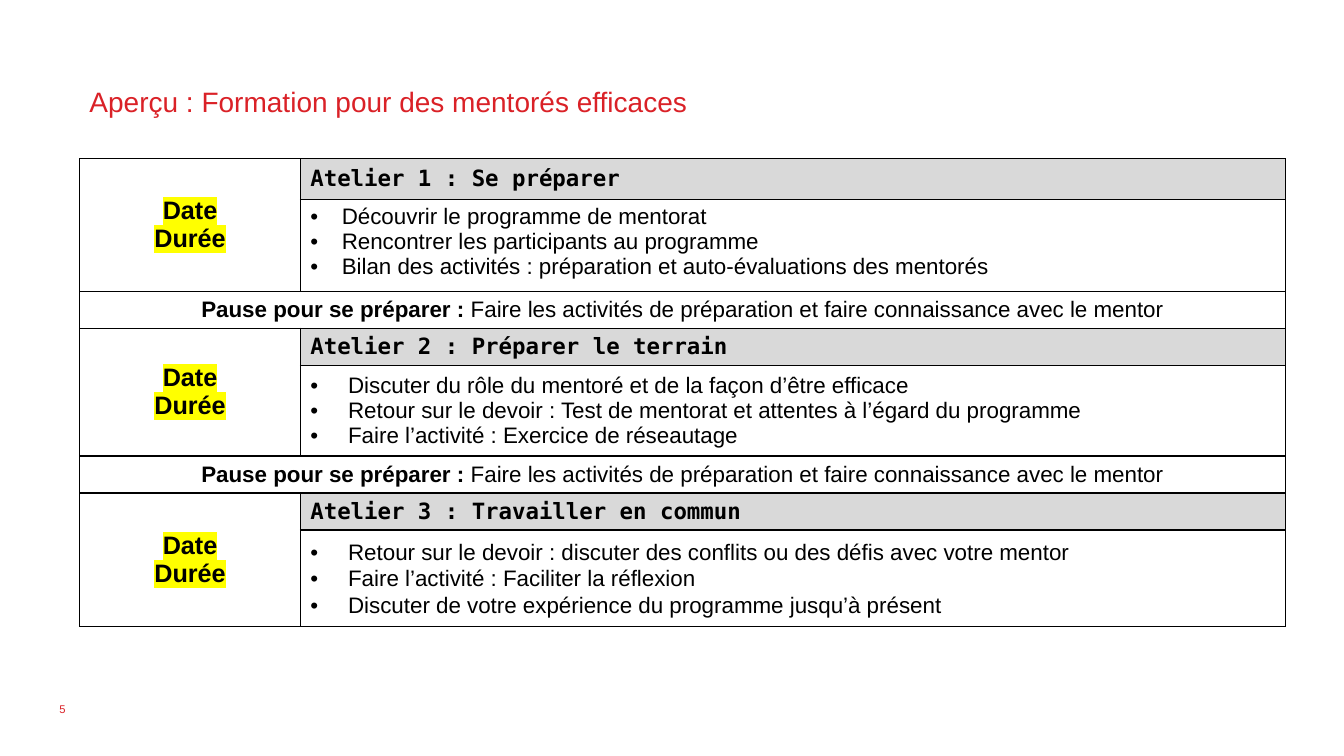
from lxml import etree
from pptx import Presentation
from pptx.dml.color import RGBColor
from pptx.enum import text
from pptx.oxml import ns
from pptx.util import Cm, Pt

RED = RGBColor(0xDA, 0x21, 0x27)
BLACK = RGBColor(0, 0, 0)
WHITE = RGBColor(0xFF, 0xFF, 0xFF)
GREY = RGBColor(0xD9, 0xD9, 0xD9)
YELLOW = RGBColor(0xFF, 0xFF, 0)
MIDDLE = text.MSO_ANCHOR.MIDDLE
CENTER = text.PP_ALIGN.CENTER

# heading, activities, bullet indent (cm), line spacing, anchor
WORKSHOPS = [
    ("Atelier 1 : Se préparer",
     ["Découvrir le programme de mentorat",
      "Rencontrer les participants au programme",
      "Bilan des activités : préparation et auto-évaluations des mentorés"],
     0.79, 1.0, text.MSO_ANCHOR.TOP),
    ("Atelier 2 : Préparer le terrain",
     ["Discuter du rôle du mentoré et de la façon d’être efficace",
      "Retour sur le devoir : Test de mentorat et attentes à l’égard du programme",
      "Faire l’activité : Exercice de réseautage"],
     0.95, 1.0, MIDDLE),
    ("Atelier 3 : Travailler en commun",
     ["Retour sur le devoir : discuter des conflits ou des défis avec votre mentor",
      "Faire l’activité : Faciliter la réflexion",
      "Discuter de votre expérience du programme jusqu’à présent"],
     0.95, 1.07, MIDDLE),
]
BREAK_LABEL = "Pause pour se préparer : "
BREAK_TASK = "Faire les activités de préparation et faire connaissance avec le mentor"
COLUMN_WIDTHS = [5.56, 24.82]
ROW_HEIGHTS = [1.03, 2.31, 0.93, 0.93, 2.28, 0.93, 0.93, 2.43]


def style(run, size, color=BLACK, bold=False, font="Arial", highlight=None):
    run.font.size = Pt(size)
    run.font.bold = bold
    run.font.color.rgb = color
    if highlight is not None:
        mark = etree.SubElement(run.font._element, ns.qn("a:highlight"))
        etree.SubElement(mark, ns.qn("a:srgbClr"), val=str(highlight))
    run.font.name = font


def add_borders(cell):
    properties = cell._tc.get_or_add_tcPr()
    for side in ("lnL", "lnR", "lnT", "lnB"):
        border = etree.SubElement(properties, ns.qn(f"a:{side}"), w=str(Pt(1)))
        fill = etree.SubElement(border, ns.qn("a:solidFill"))
        etree.SubElement(fill, ns.qn("a:srgbClr"), val=str(BLACK))


prs = Presentation()
prs.slide_width, prs.slide_height = Cm(33.87), Cm(19.05)
slide = prs.slides.add_slide(prs.slide_layouts[5])

title = slide.shapes.title
title.left, title.top, title.width, title.height = Cm(2), Cm(2), Cm(27.3), Cm(1.12)
title.text_frame.text = "Aperçu : Formation pour des mentorés efficaces"
title.text_frame.auto_size = text.MSO_AUTO_SIZE.NONE
title.text_frame.vertical_anchor = MIDDLE
title.text_frame.paragraphs[0].alignment = text.PP_ALIGN.LEFT
style(title.text_frame.paragraphs[0].runs[0], 20, RED)

page_number = slide.shapes.add_textbox(Cm(1.25), Cm(17.35), Cm(7.62), Cm(1.02)).text_frame
page_number.word_wrap = True
page_number.vertical_anchor = MIDDLE
page_number.text = "5"
style(page_number.paragraphs[0].runs[0], 8, RED)

agenda = slide.shapes.add_table(
    len(ROW_HEIGHTS), len(COLUMN_WIDTHS), Cm(2.01), Cm(4),
    Cm(sum(COLUMN_WIDTHS)), Cm(sum(ROW_HEIGHTS))).table
agenda.first_row = agenda.horz_banding = False
for column, width in zip(agenda.columns, COLUMN_WIDTHS):
    column.width = Cm(width)
for row, height in zip(agenda.rows, ROW_HEIGHTS):
    row.height = Cm(height)
for cell in agenda.iter_cells():
    add_borders(cell)
    cell.fill.solid()
    cell.fill.fore_color.rgb = WHITE
    cell.vertical_anchor = MIDDLE

for number, (name, activities, indent, spacing, anchor) in enumerate(WORKSHOPS):
    top = 3 * number

    schedule = agenda.cell(top, 0)
    schedule.merge(agenda.cell(top + 1, 0))
    schedule.text_frame.text = "Date\nDurée"
    for paragraph in schedule.text_frame.paragraphs:
        paragraph.alignment = CENTER
        style(paragraph.runs[0], 18, bold=True, highlight=YELLOW)

    heading = agenda.cell(top, 1)
    heading.fill.fore_color.rgb = GREY
    heading.text_frame.text = name
    style(heading.text_frame.paragraphs[0].runs[0], 16, bold=True, font="DejaVu Sans Mono")

    content = agenda.cell(top + 1, 1)
    content.vertical_anchor = anchor
    content.text_frame.text = "\n".join(activities)
    for paragraph in content.text_frame.paragraphs:
        bullet = paragraph._p.get_or_add_pPr()
        bullet.set("marL", str(Cm(indent)))
        bullet.set("indent", str(-Cm(indent)))
        etree.SubElement(bullet, ns.qn("a:buFont"), typeface="Arial")
        etree.SubElement(bullet, ns.qn("a:buChar"), char="•")
        paragraph.line_spacing = spacing
        style(paragraph.runs[0], 16)

    if number < len(WORKSHOPS) - 1:
        pause = agenda.cell(top + 2, 0)
        pause.merge(agenda.cell(top + 2, 1))
        paragraph = pause.text_frame.paragraphs[0]
        paragraph.alignment = CENTER
        for wording, bold in ((BREAK_LABEL, True), (BREAK_TASK, False)):
            run = paragraph.add_run()
            run.text = wording
            style(run, 16, bold=bold)

prs.save("out.pptx")
